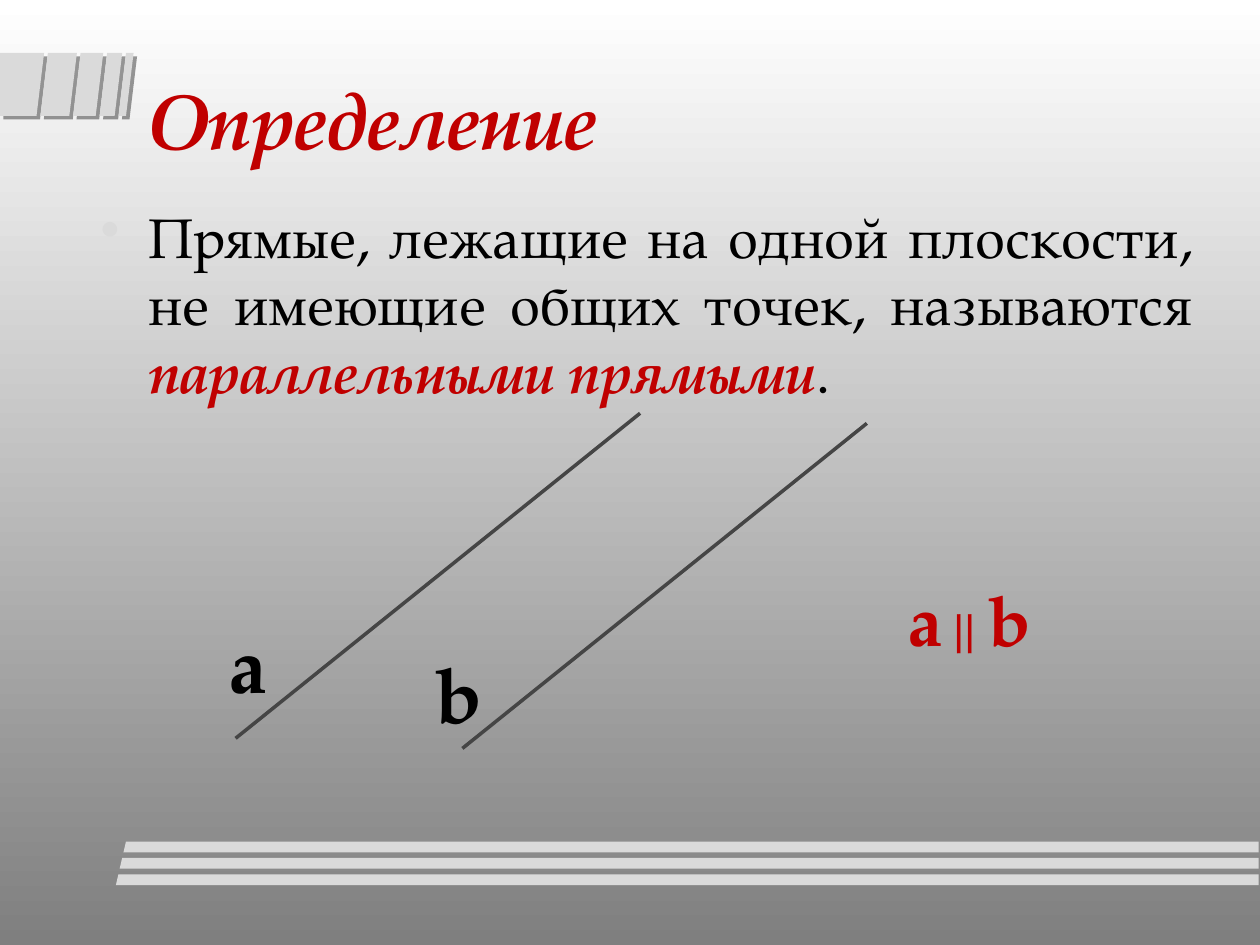
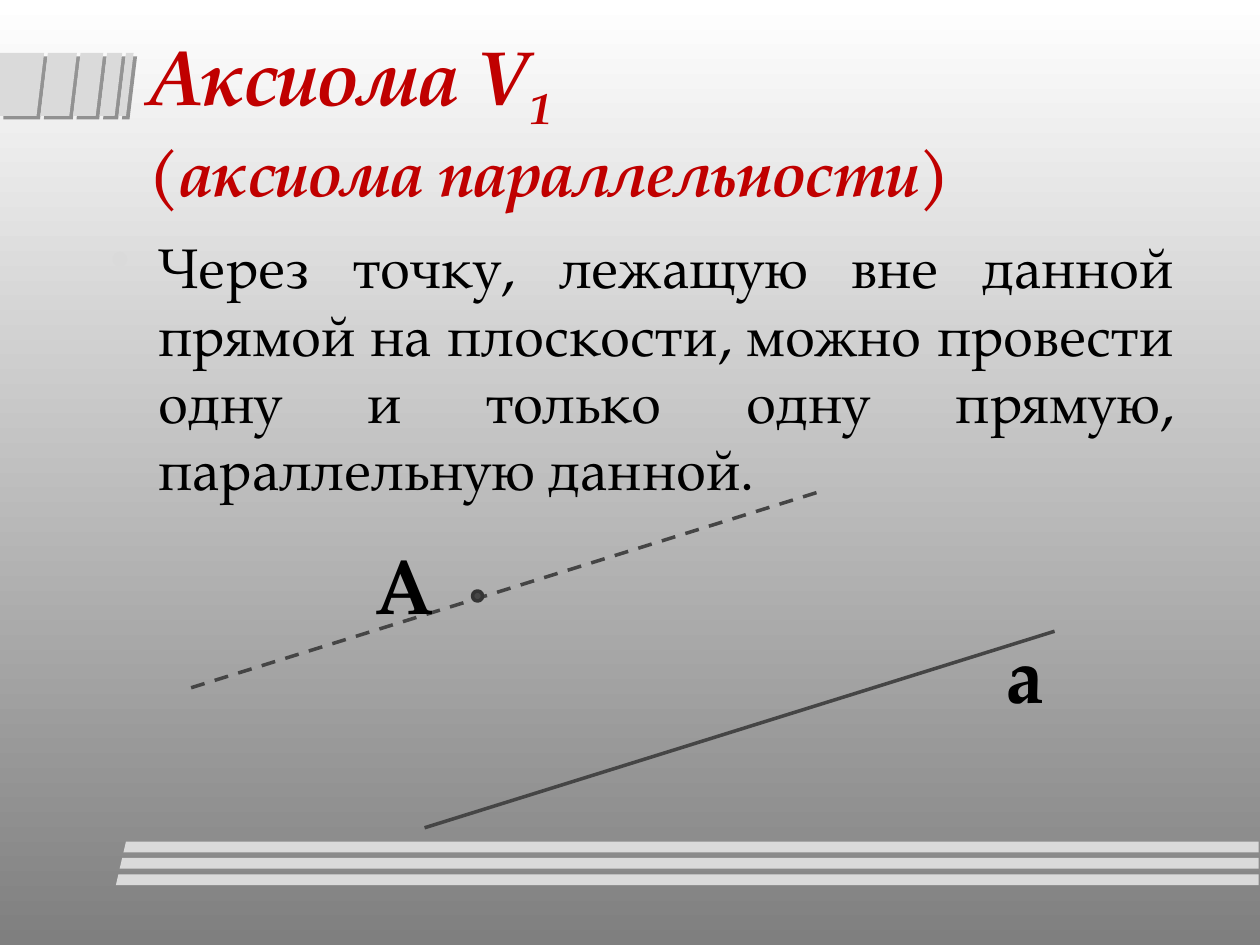
import pptx
import pptx.util
import pptx.dml.color
import pptx.enum.dml
import pptx.enum.shapes
import pptx.enum.text
import pptx.oxml
from pptx.oxml.ns import nsdecls, qn
import lxml.etree

FONT = "TeX Gyre Pagella"
HUES = {"top": "FFFFFF", "base": "7F7F7F", "band": "DADADA", "shade": "333333",
        "text": "000000", "key": "C00000", "line": "454545",
        "dot": "474747", "rim": "353535"}
COLS = 100
SIDE = pptx.util.Inches(10) // COLS  # one square cell; the slide is 100 by 75
ROWS = 75
MARK = {"bold": True, "italic": True}


def cell(*sizes):
    """Turn grid lengths into EMU."""
    return [round(size * SIDE) for size in sizes]


def hue(name):
    return pptx.dml.color.RGBColor.from_string(HUES[name])


def node(tag, inner="", **attrs):
    pairs = " ".join(f'{key}="{val}"' for key, val in attrs.items())
    return pptx.oxml.parse_xml(f'<a:{tag} {nsdecls("a")} {pairs}>{inner}</a:{tag}>')


def tint(name):
    return f'<a:srgbClr val="{HUES[name]}"/>'


def band(slide, points):
    """Draw a flat closed outline through grid points."""
    first, *rest = [cell(*point) for point in points]
    pen = slide.shapes.build_freeform(*first)
    pen.add_line_segments(rest)
    shape = pen.convert_to_shape()
    shape.fill.solid()
    shape.fill.fore_color.rgb = hue("band")
    shape.line.fill.background()
    shape.shadow.inherit = False
    return shape


def shade(shape):
    inner = f'<a:srgbClr val="{HUES["shade"]}"><a:alpha val="50000"/></a:srgbClr>'
    drop = node("outerShdw", inner, blurRad=0, dist=pptx.util.Pt(2.8),
                dir=45 * 60000, algn="ctr", rotWithShape=0)
    shape._element.spPr.find(qn("a:effectLst")).append(drop)


def tabs(slide):
    left, top, base, slant, gap = 0, 4.2, 9.2, 0.6, 0.3
    for right in (3.5, 6.1, 8.2, 9.7, 10.6):
        shade(band(slide, [(left, top), (right, top), (right - slant, base),
                           (max(0, left - slant), base)]))
        left = right + gap


def rails(slide):
    end, high = 99.9, 0.85
    for row in range(3):
        left, top = 10 - 0.3 * row, 66.8 + 1.3 * row
        band(slide, [(left, top), (end, top), (end, top + high),
                     (left - 0.2, top + high)])


def page(deck):
    """Add a slide with the shared backdrop, tabs and rails."""
    slide = deck.slides.add_slide(deck.slide_layouts[6])
    fill = slide.background.fill
    fill.gradient()
    fill.gradient_angle = 270
    for stop, name in zip(fill.gradient_stops, ("top", "base")):
        stop.color.rgb = hue(name)
    tabs(slide)
    rails(slide)
    return slide


def write(slide, at, runs, size, ink="text", **style):
    """Add a text box; each run is (text, changes), and "\\n" breaks the line."""
    box = slide.shapes.add_textbox(*cell(*at))
    box.text_frame.word_wrap = True
    par = box.text_frame.paragraphs[0]
    font = par.font
    font.name, font.size = FONT, pptx.util.Pt(size)
    font.color.rgb = hue(ink)
    for key, val in style.items():
        setattr(font, key, val)
    for text, diff in runs:
        if text == "\n":
            par.add_line_break()
            continue
        run = par.add_run()
        run.text = text
        for key, val in diff.items():
            if key == "ink":
                run.font.color.rgb = hue(val)
            elif key == "base":
                run.font._element.set("baseline", str(val * 1000))
            elif key == "size":
                run.font.size = pptx.util.Pt(val)
            else:
                setattr(run.font, key, val)
    return box


def title(slide, *runs):
    box = write(slide, (10.8, 3, 85, 12.9), runs, 44, "key", **MARK)
    box.text_frame.vertical_anchor = pptx.enum.text.MSO_ANCHOR.MIDDLE


def body(slide, at, *runs):
    size = 32
    par = write(slide, at, runs, size).text_frame.paragraphs[0]
    par.alignment = pptx.enum.text.PP_ALIGN.JUSTIFY
    par.space_before = pptx.util.Pt(0.2 * size)
    props = par._p.get_or_add_pPr()
    dent = cell(3.8)[0]
    props.set("marL", str(dent))
    props.set("indent", str(-dent))
    last = props.find(qn("a:defRPr"))
    last.addprevious(node("buClr", tint("band")))
    last.addprevious(node("buChar", char="•"))


def label(slide, at, *runs, size=44, ink="text"):
    box = write(slide, at, runs, size, ink, bold=True)
    box.text_frame.auto_size = pptx.enum.text.MSO_AUTO_SIZE.SHAPE_TO_FIT_TEXT


def line(slide, start, run, dash=False):
    """Draw a line from start, run being its span across and down."""
    (left, top), (wide, high) = start, run
    link = slide.shapes.add_connector(pptx.enum.shapes.MSO_CONNECTOR.STRAIGHT,
                                      *cell(left, top, left + wide, top + high))
    link.line.color.rgb = hue("line")
    link.line.width = pptx.util.Pt(2)
    if dash:
        link.line.dash_style = pptx.enum.dml.MSO_LINE.DASH
    lxml.etree.SubElement(link._element.spPr, qn("a:effectLst"))


def dot(slide, left, top, size):
    shape = slide.shapes.add_shape(pptx.enum.shapes.MSO_SHAPE.OVAL,
                                   *cell(left, top, size, size))
    shape.fill.solid()
    shape.fill.fore_color.rgb = hue("dot")
    shape.line.color.rgb = hue("rim")
    shape.line.width = pptx.util.Pt(2)
    shape.shadow.inherit = False


def define(deck):
    slide = page(deck)
    title(slide, ("Определение", {}))
    body(slide, (7, 15.6, 88.7, 45.7),
         ("Прямые, лежащие на одной плоскости, не имеющие общих точек, называются ", {}),
         ("параллельными прямыми", {"ink": "key", **MARK}), (".", {}))
    for start in ((50.8, 32.8), (68.8, 33.6)):
        line(slide, start, (-32.1, 25.8))
    label(slide, (17.2, 48.4, 7, 8.4), ("а", {}))
    label(slide, (71.1, 45.3, 17.2, 7.7), ("а", {}), (" || ", {"size": 28}), ("b", {}),
          size=40, ink="key")
    label(slide, (33.6, 50.8, 7.8, 8.4), ("b", {}))


def axiom(deck):
    slide = page(deck)
    title(slide, ("Аксиома V", {}), ("1 ", {"base": -25}), ("\n", {}),
          ("(аксиома параллельности)", {"size": 36}))
    body(slide, (7.8, 18, 86.4, 41),
         ("Через точку, лежащую вне данной прямой на плоскости, можно провести "
          "одну и только одну прямую, параллельную данной.", {}))
    slope = (-50, 15.6)
    line(slide, (64.8, 39.1), slope, dash=True)
    dot(slide, 37.5, 46.9, 0.8)
    label(slide, (78.9, 49.2, 7, 8.4), ("а", {}))
    label(slide, (28.9, 42.2, 7, 8.4), ("А", {}))
    line(slide, (83.7, 50.1), slope)


def main():
    deck = pptx.Presentation()
    deck.slide_width, deck.slide_height = cell(COLS, ROWS)
    define(deck)
    axiom(deck)
    deck.save("out.pptx")


if __name__ == "__main__":
    main()
